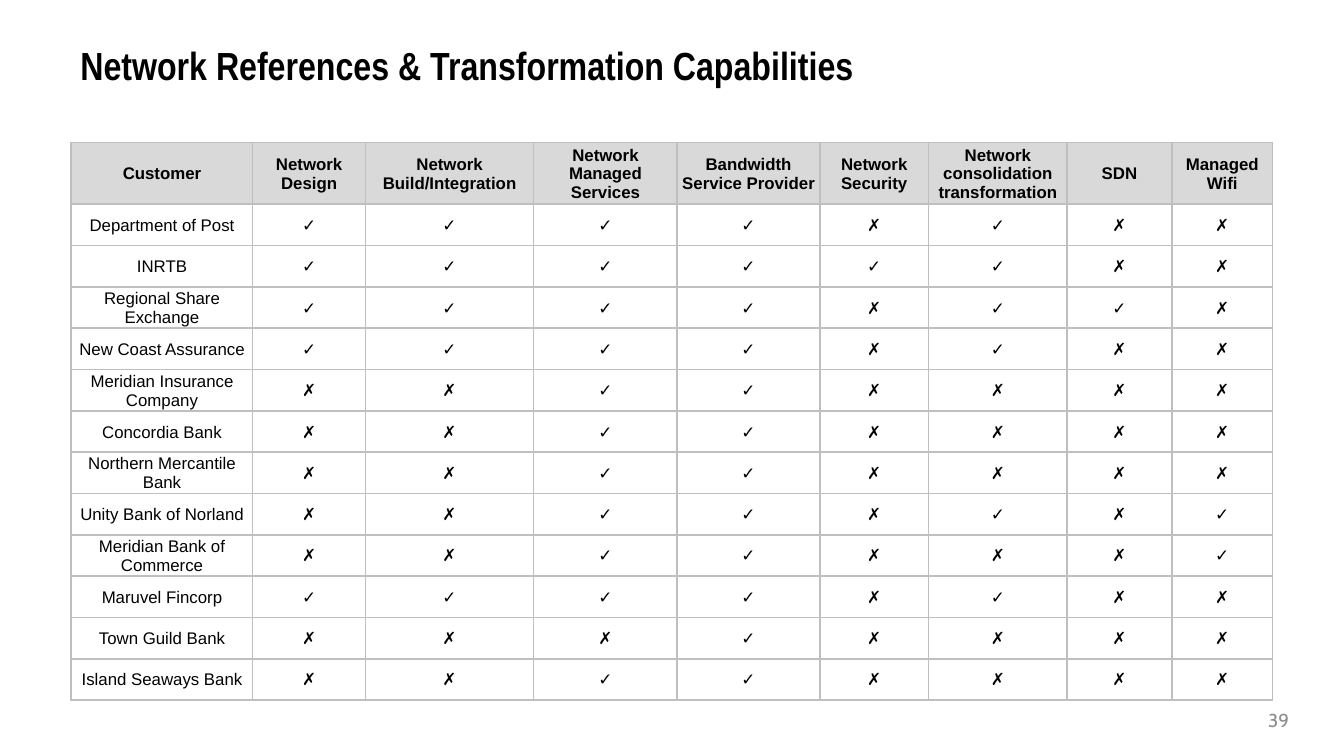
from dataclasses import dataclass

from lxml import etree
from pptx import Presentation
from pptx.dml.color import RGBColor
from pptx.enum.text import MSO_ANCHOR, PP_ALIGN
from pptx.oxml.ns import qn
from pptx.util import Inches, Pt

LEFT, CENTER, RIGHT = PP_ALIGN.LEFT, PP_ALIGN.CENTER, PP_ALIGN.RIGHT
TOP, MIDDLE = MSO_ANCHOR.TOP, MSO_ANCHOR.MIDDLE


@dataclass(frozen=True)
class TextStyle:
    font: str
    size: float
    color: str
    bold: bool = False


@dataclass(frozen=True)
class Theme:
    title: TextStyle = TextStyle("Arial Narrow", 21, "000000", True)
    header: TextStyle = TextStyle("Arial", 9, "000000", True)
    body: TextStyle = TextStyle("Arial", 9, "000000")
    page_number: TextStyle = TextStyle("Cabin", 10, "8C8C8C")
    header_fill: str = "D9D9D9"
    border: str = "BFBFBF"
    border_width: float = 1


@dataclass(frozen=True)
class Column:
    heading: str
    width: float


@dataclass(frozen=True)
class Customer:
    name: str
    marks: str


@dataclass(frozen=True)
class Label:
    text: str
    left: float
    top: float
    width: float
    height: float
    style: TextStyle
    alignment: PP_ALIGN = LEFT
    anchor: MSO_ANCHOR = TOP
    right_inset: float = 0.1


THEME = Theme()
SLIDE_WIDTH = Inches(10)
SLIDE_HEIGHT = SLIDE_WIDTH * 9 // 16
TABLE_LEFT, TABLE_TOP, TABLE_HEIGHT = 0.53, 1.06, 4.15
HEADER_HEIGHT = 0.46

COLUMNS = [
    Column("Customer", 1.35),
    Column("Network Design", 0.84),
    Column("Network Build/Integration", 1.25),
    Column("Network Managed Services", 1.07),
    Column("Bandwidth Service Provider", 1.06),
    Column("Network Security", 0.81),
    Column("Network consolidation transformation", 1.03),
    Column("SDN", 0.78),
    Column("Managed Wifi", 0.75),
]

CUSTOMERS = [
    Customer("Department of Post", "✓✓✓✓✗✓✗✗"),
    Customer("INRTB", "✓✓✓✓✓✓✗✗"),
    Customer("Regional Share Exchange", "✓✓✓✓✗✓✓✗"),
    Customer("New Coast Assurance", "✓✓✓✓✗✓✗✗"),
    Customer("Meridian Insurance Company", "✗✗✓✓✗✗✗✗"),
    Customer("Concordia Bank", "✗✗✓✓✗✗✗✗"),
    Customer("Northern Mercantile Bank", "✗✗✓✓✗✗✗✗"),
    Customer("Unity Bank of Norland", "✗✗✓✓✗✓✗✓"),
    Customer("Meridian Bank of Commerce", "✗✗✓✓✗✗✗✓"),
    Customer("Maruvel Fincorp", "✓✓✓✓✗✓✗✗"),
    Customer("Town Guild Bank", "✗✗✗✓✗✗✗✗"),
    Customer("Island Seaways Bank", "✗✗✓✓✗✗✗✗"),
]

LABELS = [
    Label("Network References & Transformation Capabilities",
          0.5, 0.26, 8, 0.45, THEME.title),
    Label("39", 9.06, 5.21, 0.53, 0.3, THEME.page_number, RIGHT, MIDDLE, 0),
]


def write_text(text_frame, text: str, style: TextStyle, alignment: PP_ALIGN) -> None:
    text_frame.text = text
    paragraph = text_frame.paragraphs[0]
    paragraph.alignment = alignment
    for run in paragraph.runs:
        run.font.name = style.font
        run.font.size = Pt(style.size)
        run.font.bold = style.bold
        run.font.color.rgb = RGBColor.from_string(style.color)


def add_label(slide, label: Label) -> None:
    shape = slide.shapes.add_textbox(Inches(label.left), Inches(label.top),
                                     Inches(label.width), Inches(label.height))
    text_frame = shape.text_frame
    text_frame.word_wrap = True
    text_frame.vertical_anchor = label.anchor
    text_frame.margin_right = Inches(label.right_inset)
    write_text(text_frame, label.text, label.style, label.alignment)


def add_borders(cell) -> None:
    properties = cell._tc.get_or_add_tcPr()
    for position, side in enumerate(("a:lnL", "a:lnR", "a:lnT", "a:lnB")):
        line = etree.Element(qn(side), w=str(Pt(THEME.border_width)))
        fill = etree.SubElement(line, qn("a:solidFill"))
        etree.SubElement(fill, qn("a:srgbClr"), val=THEME.border)
        properties.insert(position, line)


def format_cell(cell, text: str, is_header: bool) -> None:
    cell.margin_left = cell.margin_top = cell.margin_right = Inches(0.01)
    cell.margin_bottom = 0
    cell.vertical_anchor = MIDDLE
    if is_header:
        cell.fill.solid()
        cell.fill.fore_color.rgb = RGBColor.from_string(THEME.header_fill)
    else:
        cell.fill.background()
    write_text(cell.text_frame, text, THEME.header if is_header else THEME.body, CENTER)
    add_borders(cell)


def add_capability_table(slide, columns: list[Column], customers: list[Customer]) -> None:
    rows = [[column.heading for column in columns]]
    rows += [[customer.name, *customer.marks] for customer in customers]
    width = sum(column.width for column in columns)
    row_height = (TABLE_HEIGHT - HEADER_HEIGHT) / len(customers)
    table = slide.shapes.add_table(len(rows), len(columns), Inches(TABLE_LEFT), Inches(TABLE_TOP),
                                   Inches(width), Inches(TABLE_HEIGHT)).table
    table.horz_banding = False
    for table_column, column in zip(table.columns, columns):
        table_column.width = Inches(column.width)
    for row_index, texts in enumerate(rows):
        is_header = row_index == 0
        table.rows[row_index].height = Inches(HEADER_HEIGHT if is_header else row_height)
        for column_index, text in enumerate(texts):
            format_cell(table.cell(row_index, column_index), text, is_header)


def main() -> None:
    presentation = Presentation()
    presentation.slide_width = SLIDE_WIDTH
    presentation.slide_height = SLIDE_HEIGHT
    slide = presentation.slides.add_slide(presentation.slide_layouts[6])
    add_capability_table(slide, COLUMNS, CUSTOMERS)
    for label in LABELS:
        add_label(slide, label)
    presentation.save("out.pptx")


if __name__ == "__main__":
    main()
